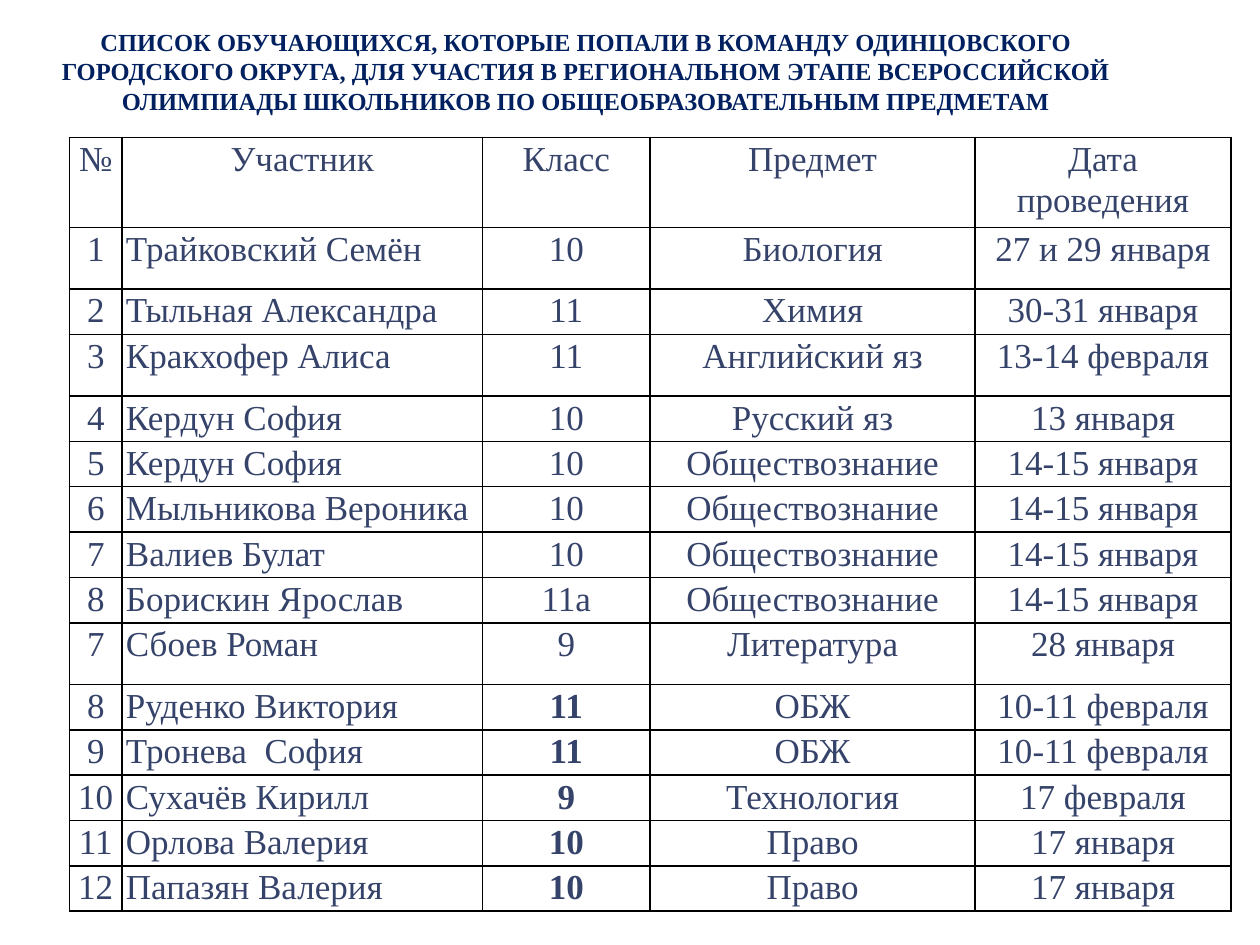
from typing import NamedTuple

from lxml import etree
from pptx import Presentation
from pptx import util as u
from pptx.dml import color
from pptx.enum import text
from pptx.oxml import ns

FONT = "Times New Roman"
TABLE_COLOR = "35436A"
TITLE_COLOR = "002060"
BORDER_COLOR = "000000"
TITLE = (
    "СПИСОК ОБУЧАЮЩИХСЯ, КОТОРЫЕ ПОПАЛИ В КОМАНДУ ОДИНЦОВСКОГО "
    "ГОРОДСКОГО ОКРУГА, ДЛЯ УЧАСТИЯ В РЕГИОНАЛЬНОМ ЭТАПЕ ВСЕРОССИЙСКОЙ "
    "ОЛИМПИАДЫ ШКОЛЬНИКОВ ПО ОБЩЕОБРАЗОВАТЕЛЬНЫМ ПРЕДМЕТАМ"
)
COLUMN_WIDTHS = (0.42, 2.86, 1.33, 2.58, 2.03)
HEADER_HEIGHT = 0.71
ROW_HEIGHT = 0.36
TALL_HEIGHT = 0.49
NAME_COLUMN = 1
GRADE_COLUMN = 2


class Entry(NamedTuple):
    number: str
    name: str
    grade: str
    subject: str
    date: str
    height: float = ROW_HEIGHT
    bold_grade: bool = False


HEADER = Entry("№", "Участник", "Класс", "Предмет", "Дата проведения", HEADER_HEIGHT)
ENTRIES = (
    Entry("1", "Трайковский Семён", "10", "Биология", "27 и 29 января", TALL_HEIGHT),
    Entry("2", "Тыльная Александра", "11", "Химия", "30-31 января"),
    Entry("3", "Кракхофер Алиса", "11", "Английский яз", "13-14 февраля", TALL_HEIGHT),
    Entry("4", "Кердун София", "10", "Русский яз", "13 января"),
    Entry("5", "Кердун София", "10", "Обществознание", "14-15 января"),
    Entry("6", "Мыльникова Вероника", "10", "Обществознание", "14-15 января"),
    Entry("7", "Валиев Булат", "10", "Обществознание", "14-15 января"),
    Entry("8", "Борискин Ярослав", "11а", "Обществознание", "14-15 января"),
    Entry("7", "Сбоев Роман", "9", "Литература", "28 января", TALL_HEIGHT),
    Entry("8", "Руденко Виктория", "11", "ОБЖ", "10-11 февраля", bold_grade=True),
    Entry("9", "Тронева  София", "11", "ОБЖ", "10-11 февраля", bold_grade=True),
    Entry("10", "Сухачёв Кирилл", "9", "Технология", "17 февраля", bold_grade=True),
    Entry("11", "Орлова Валерия", "10", "Право", "17 января", bold_grade=True),
    Entry("12", "Папазян Валерия", "10", "Право", "17 января", bold_grade=True),
)


def rgb(value: str) -> color.RGBColor:
    return color.RGBColor.from_string(value)


def add_run(paragraph, content: str, size: float, hex_color: str, bold: bool) -> None:
    run = paragraph.add_run()
    run.text = content
    run.font.name = FONT
    run.font.size = u.Pt(size)
    run.font.bold = bold
    run.font.color.rgb = rgb(hex_color)


def add_borders(cell) -> None:
    properties = cell._tc.get_or_add_tcPr()
    for side in ("lnL", "lnR", "lnT", "lnB"):
        line = etree.SubElement(properties, ns.qn(f"a:{side}"), w=str(u.Pt(1)))
        fill = etree.SubElement(line, ns.qn("a:solidFill"))
        etree.SubElement(fill, ns.qn("a:srgbClr"), val=BORDER_COLOR)


def fill_cell(cell, content: str, centered: bool, bold: bool) -> None:
    add_borders(cell)
    cell.fill.background()
    cell.margin_left = cell.margin_right = u.Inches(0.03)
    cell.margin_top = cell.margin_bottom = 0
    paragraph = cell.text_frame.paragraphs[0]
    paragraph.alignment = text.PP_ALIGN.CENTER if centered else text.PP_ALIGN.LEFT
    paragraph.line_spacing = 1.07
    add_run(paragraph, content, 20, TABLE_COLOR, bold)


def add_participants(slide) -> None:
    entries = (HEADER, *ENTRIES)
    table = slide.shapes.add_table(
        len(entries), len(COLUMN_WIDTHS), u.Inches(0.55), u.Inches(1.09),
        u.Inches(sum(COLUMN_WIDTHS)), u.Inches(sum(entry.height for entry in entries)),
    ).table
    table.first_row = table.horz_banding = False
    for column, width in zip(table.columns, COLUMN_WIDTHS):
        column.width = u.Inches(width)
    for row, entry in zip(table.rows, entries):
        row.height = u.Inches(entry.height)
        for index, cell in enumerate(row.cells):
            centered = index != NAME_COLUMN or entry is HEADER
            bold = index == GRADE_COLUMN and entry.bold_grade
            fill_cell(cell, entry[index], centered, bold)


def format_title(title) -> None:
    title.left, title.top = u.Inches(0), u.Inches(0.16)
    title.width, title.height = u.Inches(9.3), u.Inches(0.81)
    frame = title.text_frame
    frame.word_wrap = True
    frame.auto_size = text.MSO_AUTO_SIZE.SHAPE_TO_FIT_TEXT
    frame.vertical_anchor = text.MSO_ANCHOR.MIDDLE
    frame.margin_left = frame.margin_right = u.Inches(0.2)
    paragraph = frame.paragraphs[0]
    paragraph.alignment = text.PP_ALIGN.CENTER
    add_run(paragraph, TITLE, 14, TITLE_COLOR, True)


def main() -> None:
    presentation = Presentation()
    presentation.slide_width = u.Inches(10)
    presentation.slide_height = u.Inches(7.5)
    slide = presentation.slides.add_slide(presentation.slide_layouts[5])
    format_title(slide.shapes.title)
    add_participants(slide)
    presentation.save("out.pptx")


if __name__ == "__main__":
    main()
